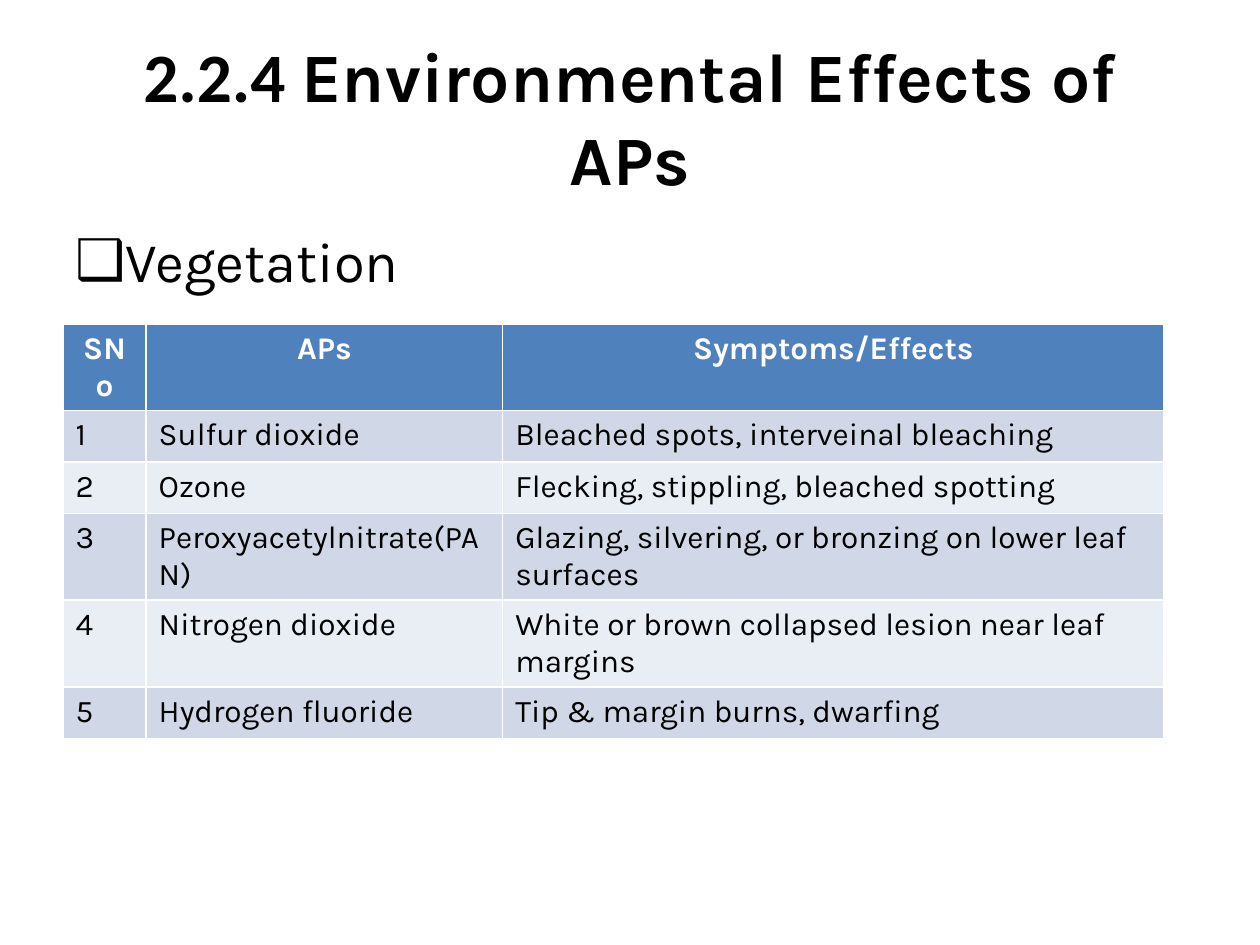
from lxml.etree import SubElement
from pptx import Presentation
from pptx.dml.color import RGBColor
from pptx.enum.text import MSO_ANCHOR, MSO_AUTO_SIZE, PP_ALIGN
from pptx.oxml.ns import qn
from pptx.util import Inches, Pt

COLORS = {
    "text": "000000",
    "header_text": "FFFFFF",
    "header": "4F81BD",
    "odd_row": "D0D8E8",
    "even_row": "E9EDF4",
}
FONT = "Karla"
COLUMN_WIDTHS = (0.66, 2.83, 5.25)
ROW_HEIGHT = 0.41
ROWS = [
    ("SNo", "APs", "Symptoms/Effects"),
    ("1", "Sulfur dioxide", "Bleached spots, interveinal bleaching"),
    ("2", "Ozone", "Flecking, stippling, bleached spotting"),
    ("3", "Peroxyacetylnitrate(PAN)",
     "Glazing, silvering, or bronzing on lower leaf surfaces"),
    ("4", "Nitrogen dioxide", "White or brown collapsed lesion near leaf margins"),
    ("5", "Hydrogen fluoride", "Tip & margin burns, dwarfing"),
]


def add_run(paragraph, text, color="text", **font_format):
    run = paragraph.add_run()
    run.text = text
    for name, value in ({"name": FONT} | font_format).items():
        setattr(run.font, name, value)
    run.font.color.rgb = RGBColor.from_string(COLORS[color])


def place(shape, box):
    """Move a shape to box: left, top, width and height in inches."""
    for name, value in zip(("left", "top", "width", "height"), box):
        setattr(shape, name, Inches(value))


def fill_title(shape, box):
    place(shape, box)
    frame = shape.text_frame
    frame.auto_size = MSO_AUTO_SIZE.NONE
    frame.vertical_anchor = MSO_ANCHOR.MIDDLE
    paragraph = frame.paragraphs[0]
    paragraph.alignment = PP_ALIGN.CENTER
    add_run(paragraph, "2.2.4 ", name="Calibri", size=Pt(39.6), bold=True)
    add_run(paragraph, "Environmental Effects of APs", size=Pt(39.6), bold=True)


def fill_body(shape, box):
    place(shape, box)
    shape.text_frame.auto_size = MSO_AUTO_SIZE.NONE
    paragraph = shape.text_frame.paragraphs[0]
    add_run(paragraph, "Vegetation", size=Pt(32))
    properties = paragraph._p.get_or_add_pPr()
    properties.set("marL", str(Inches(0.38)))
    properties.set("indent", str(Inches(-0.38)))
    SubElement(properties, qn("a:buChar")).set("char", "❑")


def add_effects_table(slide, left, top):
    """Add the table; its default style draws the white borders."""
    table = slide.shapes.add_table(
        len(ROWS), len(COLUMN_WIDTHS), Inches(left), Inches(top),
        Inches(sum(COLUMN_WIDTHS)), Inches(ROW_HEIGHT * len(ROWS))).table
    for column, width in zip(table.columns, COLUMN_WIDTHS):
        column.width = Inches(width)
    for row_index, texts in enumerate(ROWS):
        is_header = row_index == 0
        fill = "header" if is_header else "odd_row" if row_index % 2 else "even_row"
        for cell, text in zip(table.rows[row_index].cells, texts):
            cell.fill.solid()
            cell.fill.fore_color.rgb = RGBColor.from_string(COLORS[fill])
            paragraph = cell.text_frame.paragraphs[0]
            paragraph.alignment = PP_ALIGN.CENTER if is_header else PP_ALIGN.LEFT
            add_run(paragraph, text, "header_text" if is_header else "text",
                    size=Pt(18), bold=is_header)


def main():
    presentation = Presentation()
    presentation.slide_width = Inches(10)
    presentation.slide_height = Inches(7.5)
    slide = presentation.slides.add_slide(presentation.slide_layouts[1])
    fill_title(slide.shapes.title, (0.5, 0.3, 9, 1.25))
    fill_body(slide.placeholders[1], (0.5, 1.75, 9, 4.95))
    add_effects_table(slide, 0.5, 2.57)
    presentation.save("out.pptx")


if __name__ == "__main__":
    main()
